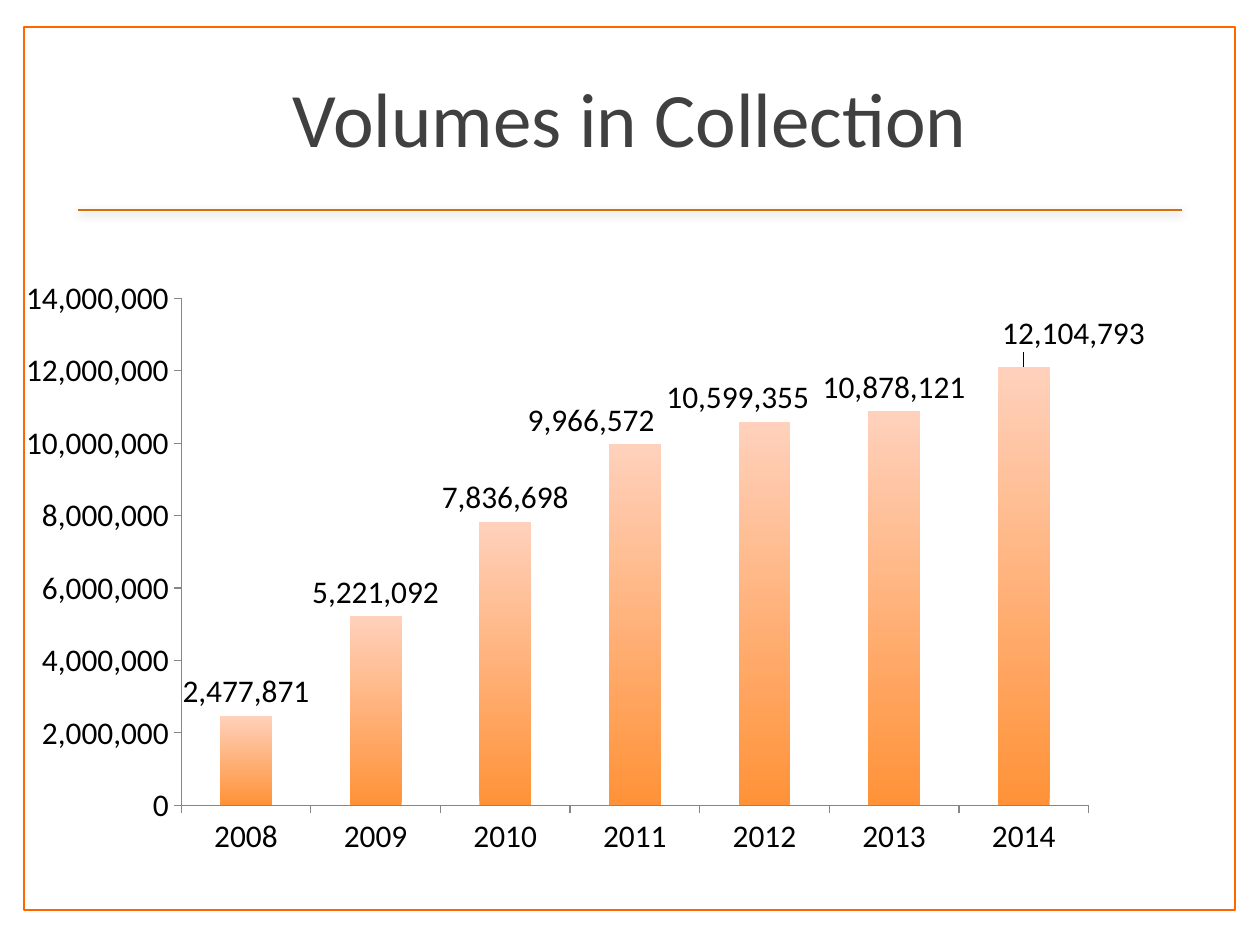
"""Build the slide with the column chart of volumes in the collection."""
from lxml import etree
from pptx import Presentation
from pptx import util as u
from pptx.chart.data import CategoryChartData
from pptx.dml.color import RGBColor
from pptx.enum import chart as ch, shapes, text
from pptx.oxml import parse_xml
from pptx.oxml.ns import nsdecls, qn

COLORS = {
    "paper": "FFFFFF", "border": "FF6600", "rule": "D57007", "title": "404040",
    "label": "000000", "axis": "868686", "bar_bottom": "FF9238", "bar_top": "FFD1BC",
}
VOLUMES = {
    "2008": 2477871, "2009": 5221092, "2010": 7836698, "2011": 9966572,
    "2012": 10599355, "2013": 10878121, "2014": 12104793,
}
LABEL_SHIFTS = {"2011": (-44, 0), "2012": (-27, 0), "2014": (50, -10)}
CHART_W, CHART_H = 1222, 709


def px(*lengths):
    return [u.Emu(round(length * 914400 / 126)) for length in lengths]


def write(frame, words, size, color, font="Calibri", align=text.PP_ALIGN.CENTER):
    frame.word_wrap = True
    frame.vertical_anchor = text.MSO_ANCHOR.MIDDLE
    paragraph = frame.paragraphs[0]
    paragraph.alignment = align
    run = paragraph.add_run()
    run.text = words
    run.font.size, run.font.name = u.Pt(size), font
    run.font.color.rgb = RGBColor.from_string(COLORS[color])


prs = Presentation()
prs.slide_width, prs.slide_height = px(1260, 945)
slide = prs.slides.add_slide(prs.slide_layouts[5])

border = slide.shapes.add_shape(shapes.MSO_SHAPE.RECTANGLE, *px(24, 27, 1211, 883))
border.shadow.inherit = False
border.fill.solid()
border.fill.fore_color.rgb = RGBColor.from_string(COLORS["paper"])
border.line.color.rgb = RGBColor.from_string(COLORS["border"])
border.line.width = u.Pt(1)

rule = slide.shapes.add_connector(shapes.MSO_CONNECTOR.STRAIGHT, *px(78, 210, 1182, 210))
rule.line.color.rgb = RGBColor.from_string(COLORS["rule"])
rule.line.width = u.Pt(1)
rule._element.spPr.append(parse_xml(
    f'<a:effectLst {nsdecls("a")}><a:outerShdw blurRad="63500" dist="22860" dir="5400000" '
    'rotWithShape="0"><a:srgbClr val="000000"><a:alpha val="35000"/></a:srgbClr>'
    '</a:outerShdw></a:effectLst>'))

title = slide.shapes.title
title.left, title.top, title.width, title.height = px(63, 38, 1134, 158)
write(title.text_frame, "Volumes in Collection", size=44, color="title")
slide.shapes._spTree.append(title._element)

data = CategoryChartData(number_format="#,##0")
data.categories = list(VOLUMES)
data.add_series("Series 1", list(VOLUMES.values()))
chart = slide.shapes.add_chart(
    ch.XL_CHART_TYPE.COLUMN_CLUSTERED, *px(26, 185, CHART_W, CHART_H), data).chart
chart.has_legend = False
chart.has_title = False
chart.font.size, chart.font.name = u.Pt(18), "Calibri"
chart.font.color.rgb = RGBColor.from_string(COLORS["label"])

for axis in (chart.category_axis, chart.value_axis):
    axis.has_major_gridlines = False
    axis.major_tick_mark = ch.XL_TICK_MARK.OUTSIDE
    axis.minor_tick_mark = ch.XL_TICK_MARK.NONE
    axis.format.line.color.rgb = RGBColor.from_string(COLORS["axis"])
    axis.format.line.width = u.Pt(0.75)
chart.value_axis.minimum_scale = 0
chart.value_axis.maximum_scale = 14000000
chart.value_axis.major_unit = 2000000
chart.value_axis.tick_labels.number_format = "#,##0"
chart.value_axis.tick_labels.number_format_is_linked = False

plot = chart.plots[0]
plot.gap_width = 150
plot.vary_by_categories = False
volumes = plot.series[0]
bar_fill = volumes.format.fill
bar_fill.gradient()
bar_fill.gradient_angle = 90
for stop, shade in zip(bar_fill.gradient_stops, ("bar_bottom", "bar_top")):
    stop.color.rgb = RGBColor.from_string(COLORS[shade])

labels = volumes.data_labels
labels.show_value = True
labels.number_format, labels.number_format_is_linked = "#,##0", False
labels.position = ch.XL_LABEL_POSITION.OUTSIDE_END
for year, (dx, dy) in LABEL_SHIFTS.items():
    index = list(VOLUMES).index(year)
    label = volumes.points[index].data_label
    label.position = ch.XL_LABEL_POSITION.OUTSIDE_END
    label.font.size, label.font.name = u.Pt(18), "Calibri"
    label.font.color.rgb = RGBColor.from_string(COLORS["label"])
    element = volumes._element.xpath(f'c:dLbls/c:dLbl[c:idx/@val="{index}"]')[0]
    element.insert(1, parse_xml(
        f'<c:layout {nsdecls("c")}><c:manualLayout><c:x val="{dx / CHART_W:.3f}"/>'
        f'<c:y val="{dy / CHART_H:.3f}"/></c:manualLayout></c:layout>'))

plot_area = chart._chartSpace.chart.plotArea
for old_layout in plot_area.findall(qn("c:layout")):
    plot_area.remove(old_layout)
layout = etree.Element(qn("c:layout"))
manual = etree.SubElement(layout, qn("c:manualLayout"))
for tag, value in (("layoutTarget", "inner"), ("xMode", "edge"), ("yMode", "edge"),
                   ("x", "0.123"), ("y", "0.16"), ("w", "0.746"), ("h", "0.715")):
    etree.SubElement(manual, qn(f"c:{tag}")).set("val", value)
plot_area.insert(0, layout)

prs.save("out.pptx")
